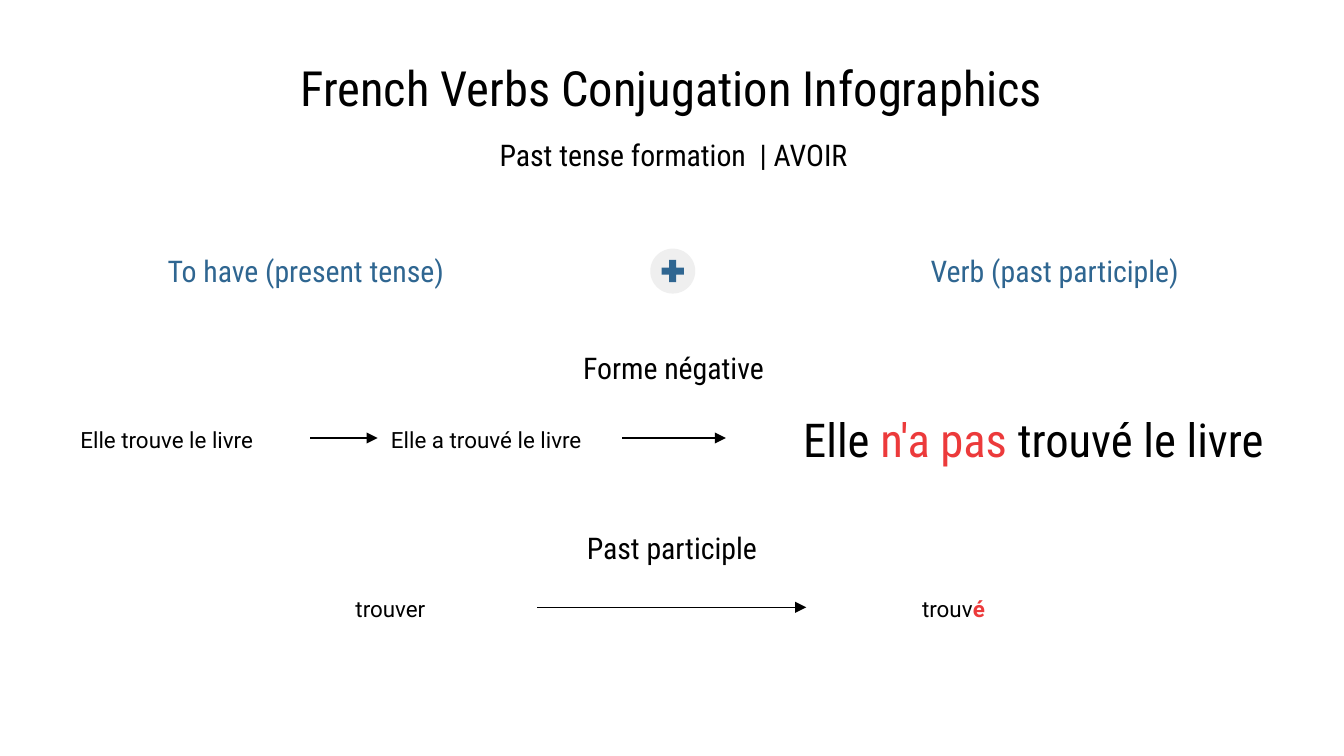
import pptx
import pptx.util
import pptx.dml.color
import pptx.enum.shapes
import pptx.enum.text
import pptx.oxml
import pptx.oxml.ns

Cm = pptx.util.Cm
Pt = pptx.util.Pt
ALIGN = pptx.enum.text.PP_ALIGN
ANCHOR = pptx.enum.text.MSO_ANCHOR
SHAPE = pptx.enum.shapes.MSO_SHAPE

COLORS = {"black": "000000", "blue": "2F6691", "red": "EC3A3B", "gray": "EFEFEF"}
HEADING_FONT = "Roboto Condensed"
BODY_FONT = "Roboto"


def rgb(name):
    return pptx.dml.color.RGBColor.from_string(COLORS[name])


def write_text(box, place, spans, size, font, align, anchor):
    box.left, box.top, box.width, box.height = [Cm(value) for value in place]
    frame = box.text_frame
    frame.word_wrap = True
    frame.auto_size = pptx.enum.text.MSO_AUTO_SIZE.NONE
    frame.vertical_anchor = anchor
    frame.margin_left = frame.margin_right = Cm(0.25)
    frame.margin_top = frame.margin_bottom = Cm(0.25)
    para = frame.paragraphs[0]
    para.alignment = align
    para.font.size = Pt(size)
    para.font.name = font
    for words, color, bold in spans:
        span = para.add_run()
        span.text = words
        span.font.color.rgb = rgb(color)
        if bold:
            span.font.bold = True


deck = pptx.Presentation()
deck.slide_width = Cm(25.4)
deck.slide_height = Cm(14.29)
page = deck.slides.add_slide(deck.slide_layouts[5])

write_text(page.shapes.title, (1.27, 1.14, 22.86, 1.3),
           [("French Verbs Conjugation Infographics", "black", False)],
           26, HEADING_FONT, ALIGN.CENTER, ANCHOR.BOTTOM)

headings = [
    ("Past tense formation  | AVOIR", 5.77, 2.46, 13.92, "black", ALIGN.CENTER),
    ("To have (present tense)", 2.92, 4.65, 8.81, "blue", ALIGN.LEFT),
    ("Verb (past participle)", 13.72, 4.65, 8.81, "blue", ALIGN.RIGHT),
    ("Forme négative", 5.77, 6.48, 13.92, "black", ALIGN.CENTER),
    ("Past participle", 5.74, 9.88, 13.92, "black", ALIGN.CENTER),
]
for words, left, top, width, color, align in headings:
    box = page.shapes.add_textbox(0, 0, 0, 0)
    write_text(box, (left, top, width, 0.94), [(words, color, False)],
               16, HEADING_FONT, align, ANCHOR.MIDDLE)

for kind, left, top, size, color in [
    (SHAPE.OVAL, 12.29, 4.7, 0.85, "gray"),
    (SHAPE.MATH_PLUS, 12.43, 4.84, 0.57, "blue"),
]:
    badge = page.shapes.add_shape(kind, Cm(left), Cm(top), Cm(size), Cm(size))
    badge.shadow.inherit = False
    badge.fill.solid()
    badge.fill.fore_color.rgb = rgb(color)
    badge.line.fill.background()
    if kind == SHAPE.MATH_PLUS:
        badge.adjustments[0] = 0.235

examples = [
    ([("Elle trouve le livre", "black", False)], 1.27, 7.8, 4.6, ALIGN.LEFT),
    ([("Elle a trouvé le livre", "black", False)], 7.14, 7.8, 4.6, ALIGN.LEFT),
    ([("trouver", "black", False)], 4.6, 11, 5.56, ALIGN.CENTER),
    ([("trouv", "black", False), ("é", "red", True)], 15.24, 11, 5.56, ALIGN.CENTER),
]
for spans, left, top, width, align in examples:
    box = page.shapes.add_textbox(0, 0, 0, 0)
    write_text(box, (left, top, width, 0.94), spans, 12, BODY_FONT, align, ANCHOR.TOP)

negative = page.shapes.add_textbox(0, 0, 0, 0)
write_text(negative, (13.72, 7.92, 10.41, 0.74),
           [("Elle ", "black", False), ("n'a pas", "red", False),
            (" trouvé le livre", "black", False)],
           25, HEADING_FONT, ALIGN.RIGHT, ANCHOR.MIDDLE)

for tip, tail, height in [(7.14, 5.87, 8.28), (13.72, 11.76, 8.28), (15.24, 10.16, 11.48)]:
    arrow = page.shapes.add_connector(pptx.enum.shapes.MSO_CONNECTOR.ELBOW,
                                      Cm(tip), Cm(height), Cm(tail), Cm(height))
    arrow.line.color.rgb = rgb("black")
    arrow.line.width = Pt(0.75)
    head = pptx.oxml.parse_xml(
        '<a:headEnd %s type="triangle" w="med" len="med"/>' % pptx.oxml.ns.nsdecls("a"))
    arrow.line._get_or_add_ln().append(head)
    effects = pptx.oxml.parse_xml("<a:effectLst %s/>" % pptx.oxml.ns.nsdecls("a"))
    arrow._element.spPr.append(effects)

deck.save("out.pptx")
